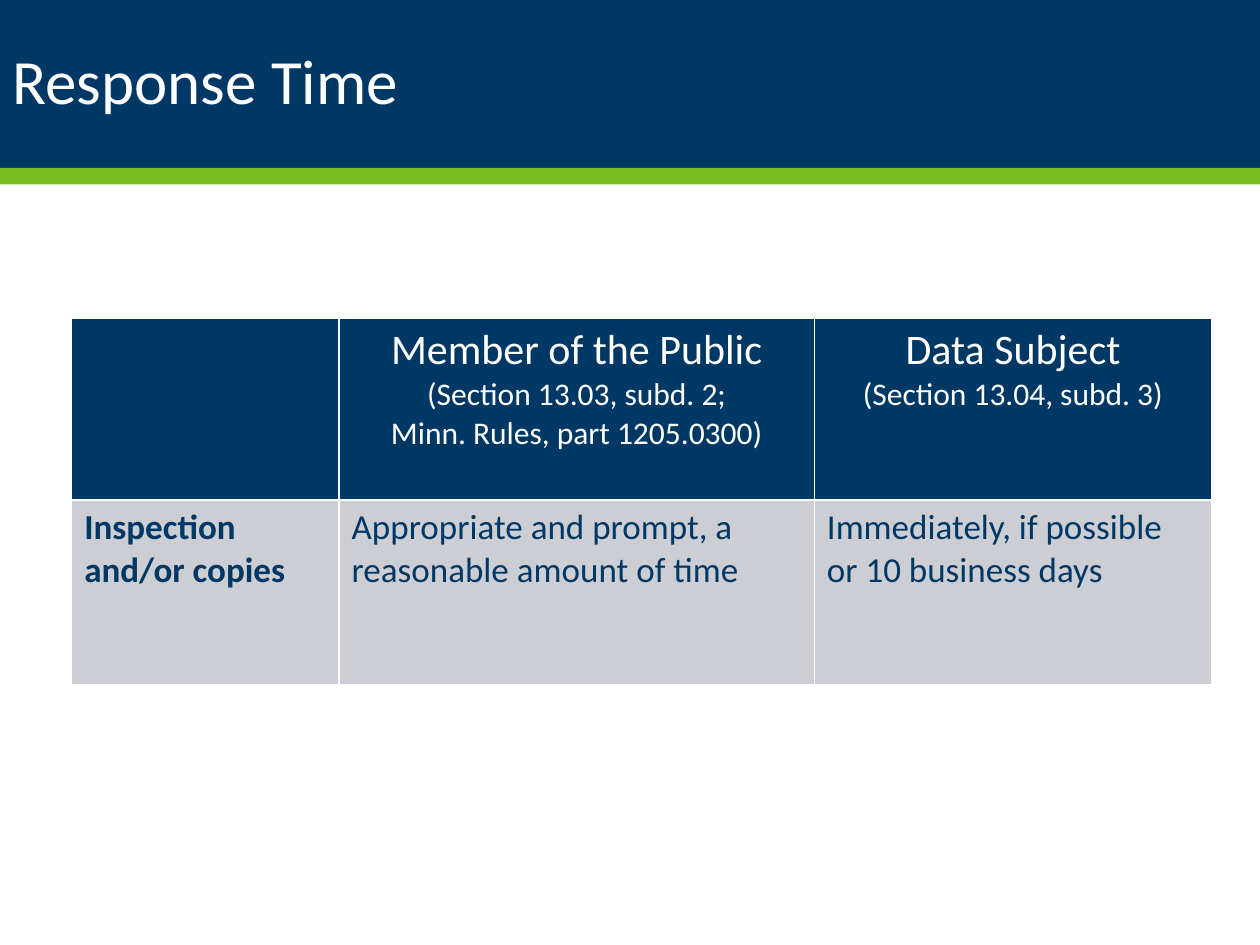
from dataclasses import dataclass

from lxml.etree import SubElement
from pptx import Presentation
from pptx.dml.color import RGBColor
from pptx.enum.shapes import MSO_SHAPE as SHAPE
from pptx.enum.text import MSO_ANCHOR as ANCHOR, PP_ALIGN as ALIGN
from pptx.oxml.ns import qn
from pptx.util import Pt

NAVY = RGBColor(0x00, 0x38, 0x65)
GREEN = RGBColor(0x78, 0xBE, 0x21)
GRAY = RGBColor(0xCC, 0xCE, 0xD3)
WHITE = RGBColor(0xFF, 0xFF, 0xFF)
FONT = "Calibri"
SLIDE_W, SLIDE_H = 720, 540
BAND_H, STRIPE_H = 96, 9.4
COL_WIDTHS = (152.8, 271.6, 227)
ROW_HEIGHTS = (104, 105.6)


@dataclass
class Line:
    text: str
    size: float
    bold: bool = False


@dataclass
class RowStyle:
    fill: RGBColor
    color: RGBColor
    align: ALIGN


ROW_STYLES = (RowStyle(NAVY, WHITE, ALIGN.CENTER), RowStyle(GRAY, NAVY, ALIGN.LEFT))
CELLS = (
    (
        [],
        [Line("Member of the Public", 24),
         Line("(Section 13.03, subd. 2;", 18),
         Line("Minn. Rules, part 1205.0300)", 18)],
        [Line("Data Subject", 24), Line("(Section 13.04, subd. 3)", 18)],
    ),
    (
        [Line("Inspection and/or copies", 20, True)],
        [Line("Appropriate and prompt, a reasonable amount of time", 20)],
        [Line("Immediately, if possible or 10 business days", 20)],
    ),
)


def format_run(r, size: float, color: RGBColor, bold: bool = False) -> None:
    r.font.name = FONT
    r.font.size = Pt(size)
    r.font.bold = bold
    r.font.color.rgb = color


def add_band(slide, top: float, height: float, color: RGBColor) -> None:
    sp = slide.shapes.add_shape(SHAPE.RECTANGLE, 0, Pt(top), Pt(SLIDE_W), Pt(height))
    sp.shadow.inherit = False
    sp.fill.solid()
    sp.fill.fore_color.rgb = color
    sp.line.fill.background()


def set_borders(cell, color: RGBColor, width: float) -> None:
    props = cell._tc.get_or_add_tcPr()
    for side in ("lnL", "lnR", "lnT", "lnB"):
        ln = SubElement(props, qn(f"a:{side}"), w=str(Pt(width)))
        fill = SubElement(ln, qn("a:solidFill"))
        SubElement(fill, qn("a:srgbClr"), val=str(color))


def fill_cell(cell, lines: list[Line], style: RowStyle) -> None:
    set_borders(cell, WHITE, 1)
    cell.fill.solid()
    cell.fill.fore_color.rgb = style.fill
    tf = cell.text_frame
    tf.text = "\n".join(line.text for line in lines)
    for p, line in zip(tf.paragraphs, lines):
        p.alignment = style.align
        format_run(p.runs[0], line.size, style.color, line.bold)


def add_title(slide, text: str) -> None:
    title = slide.shapes.title
    title.left, title.top, title.width, title.height = 0, 0, Pt(SLIDE_W), Pt(BAND_H)
    tf = title.text_frame
    tf.text = text
    tf.vertical_anchor = ANCHOR.MIDDLE
    p = tf.paragraphs[0]
    p.alignment = ALIGN.LEFT
    p.line_spacing = 0.9
    format_run(p.runs[0], 36, WHITE)


def add_response_table(slide) -> None:
    table = slide.shapes.add_table(
        len(ROW_HEIGHTS), len(COL_WIDTHS), Pt(41), Pt(181.8),
        Pt(sum(COL_WIDTHS)), Pt(sum(ROW_HEIGHTS))).table
    for column, width in zip(table.columns, COL_WIDTHS):
        column.width = Pt(width)
    for row, height, style, contents in zip(table.rows, ROW_HEIGHTS, ROW_STYLES, CELLS):
        row.height = Pt(height)
        for cell, lines in zip(row.cells, contents):
            fill_cell(cell, lines, style)


def main() -> None:
    prs = Presentation()
    prs.slide_width, prs.slide_height = Pt(SLIDE_W), Pt(SLIDE_H)
    slide = prs.slides.add_slide(prs.slide_layouts[5])

    # Header bands, with the title brought in front of them
    add_band(slide, 0, BAND_H, NAVY)
    add_band(slide, BAND_H, STRIPE_H, GREEN)
    add_title(slide, "Response Time")
    slide.shapes._spTree.append(slide.shapes.title._element)

    # Response times by requester
    add_response_table(slide)
    prs.save("out.pptx")


if __name__ == "__main__":
    main()
